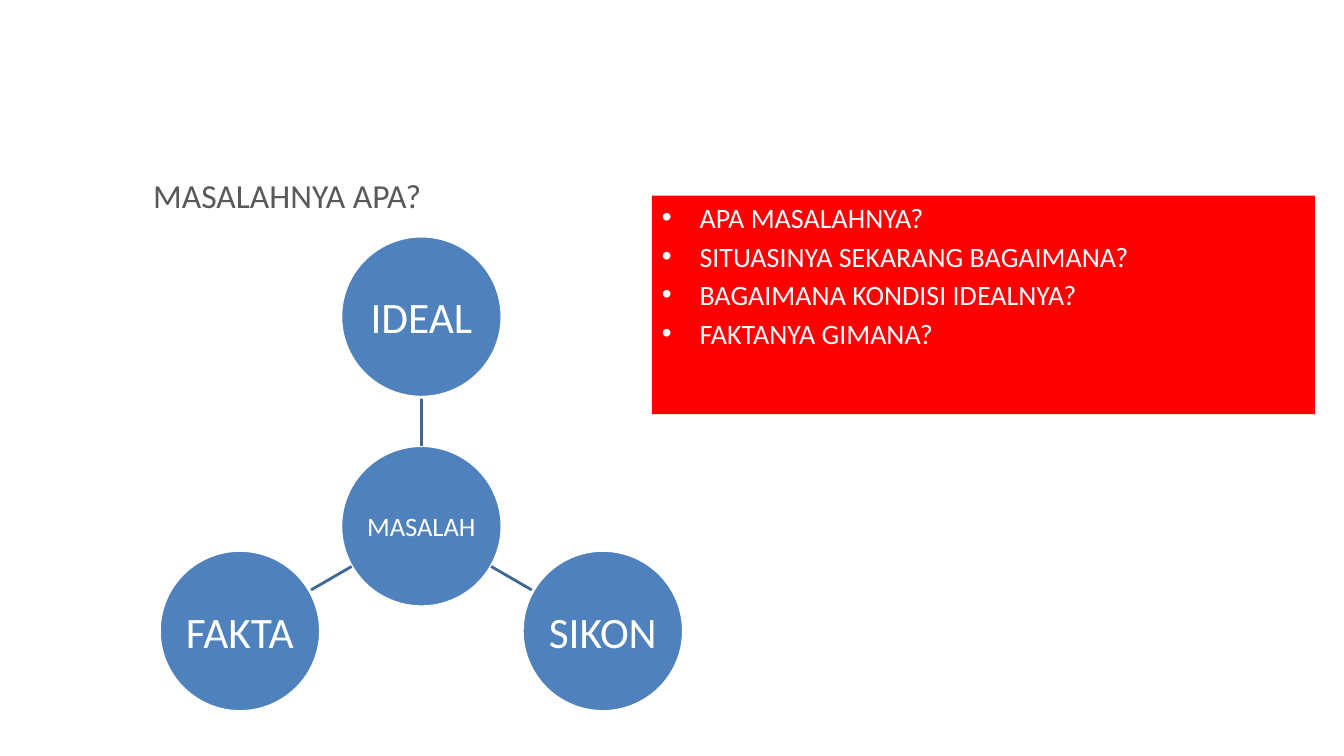
from dataclasses import dataclass
from math import cos, radians, sin

from lxml import etree
from pptx import Presentation
from pptx.dml.color import RGBColor
from pptx.enum import shapes, text
from pptx.oxml import ns
from pptx.util import Cm, Pt

WHITE = RGBColor(0xFF, 0xFF, 0xFF)
GREY = RGBColor(0x59, 0x59, 0x59)
BLUE = RGBColor(0x4F, 0x81, 0xBD)
DARK_BLUE = RGBColor(0x3F, 0x67, 0x97)
RED = RGBColor(0xFF, 0x00, 0x00)

FONT = "Calibri"
CENTER_X, CENTER_Y = 10.62, 13.26
RADIUS = 2.03
ORBIT = 5.28
BULLET_INDENT = Cm(0.95)


@dataclass(frozen=True)
class Satellite:
    label: str
    angle: float


SATELLITES = [Satellite("IDEAL", -90), Satellite("SIKON", 30), Satellite("FAKTA", 150)]
QUESTIONS = [
    "APA MASALAHNYA?",
    "SITUASINYA SEKARANG BAGAIMANA?",
    "BAGAIMANA KONDISI IDEALNYA?",
    "FAKTANYA GIMANA?",
]


def add_bullet(paragraph) -> None:
    properties = paragraph._p.get_or_add_pPr()
    properties.set("marL", str(BULLET_INDENT))
    properties.set("indent", str(-BULLET_INDENT))
    etree.SubElement(properties, ns.qn("a:buFont")).set("typeface", "Arial")
    etree.SubElement(properties, ns.qn("a:buChar")).set("char", "•")


def write(shape, lines: list[str], *, size: float, color: RGBColor = WHITE,
          align=text.PP_ALIGN.LEFT, anchor=text.MSO_ANCHOR.MIDDLE,
          wrap: bool = True, bullets: bool = False, gap: float = 0) -> None:
    """Fill a shape with one paragraph per line, gap points apart."""
    frame = shape.text_frame
    frame.word_wrap = wrap
    frame.vertical_anchor = anchor
    for index, line in enumerate(lines):
        paragraph = frame.add_paragraph() if index else frame.paragraphs[0]
        paragraph.alignment = align
        if index and gap:
            paragraph.space_before = Pt(gap)
        if bullets:
            add_bullet(paragraph)
        run = paragraph.add_run()
        run.text = line
        run.font.name = FONT
        run.font.size = Pt(size)
        run.font.color.rgb = color


def polar(angle: float, distance: float) -> tuple[float, float]:
    """Point in centimetres at a distance from the centre of the diagram."""
    turn = radians(angle)
    return CENTER_X + distance * cos(turn), CENTER_Y + distance * sin(turn)


def add_circle(slide, x: float, y: float, label: str, size: float) -> None:
    circle = slide.shapes.add_shape(
        shapes.MSO_SHAPE.OVAL, Cm(x - RADIUS), Cm(y - RADIUS), Cm(2 * RADIUS), Cm(2 * RADIUS))
    circle.shadow.inherit = False
    circle.fill.solid()
    circle.fill.fore_color.rgb = BLUE
    circle.line.color.rgb = WHITE
    circle.line.width = Pt(2)
    frame = circle.text_frame
    frame.margin_left = frame.margin_right = frame.margin_top = frame.margin_bottom = Cm(0.05)
    write(circle, [label], size=size, align=text.PP_ALIGN.CENTER, wrap=False)


def add_spoke(slide, angle: float) -> None:
    start, end = polar(angle, RADIUS), polar(angle, ORBIT - RADIUS)
    spoke = slide.shapes.add_connector(
        shapes.MSO_CONNECTOR.STRAIGHT, *(Cm(value) for value in start + end))
    spoke.line.color.rgb = DARK_BLUE
    spoke.line.width = Pt(2)
    etree.SubElement(spoke._element.spPr, ns.qn("a:effectLst"))


def add_question_box(slide) -> None:
    box = slide.shapes.add_shape(
        shapes.MSO_SHAPE.RECTANGLE, Cm(16.43), Cm(4.93), Cm(16.71), Cm(5.51))
    box.shadow.inherit = False
    box.fill.solid()
    box.fill.fore_color.rgb = RED
    box.line.fill.background()
    write(box, QUESTIONS, size=20, anchor=text.MSO_ANCHOR.TOP, bullets=True, gap=3.5)


def main() -> None:
    presentation = Presentation()
    presentation.slide_width = Cm(33.87)
    presentation.slide_height = Cm(19.05)
    slide = presentation.slides.add_slide(presentation.slide_layouts[6])

    title = slide.shapes.add_textbox(Cm(3.61), Cm(4.32), Cm(27.99), Cm(1.19))
    write(title, ["MASALAHNYA APA?"], size=24, color=GREY)

    add_circle(slide, CENTER_X, CENTER_Y, "MASALAH", 19)
    for satellite in SATELLITES:
        add_spoke(slide, satellite.angle)
        add_circle(slide, *polar(satellite.angle, ORBIT), satellite.label, 31)
    add_question_box(slide)

    presentation.save("out.pptx")


if __name__ == "__main__":
    main()
